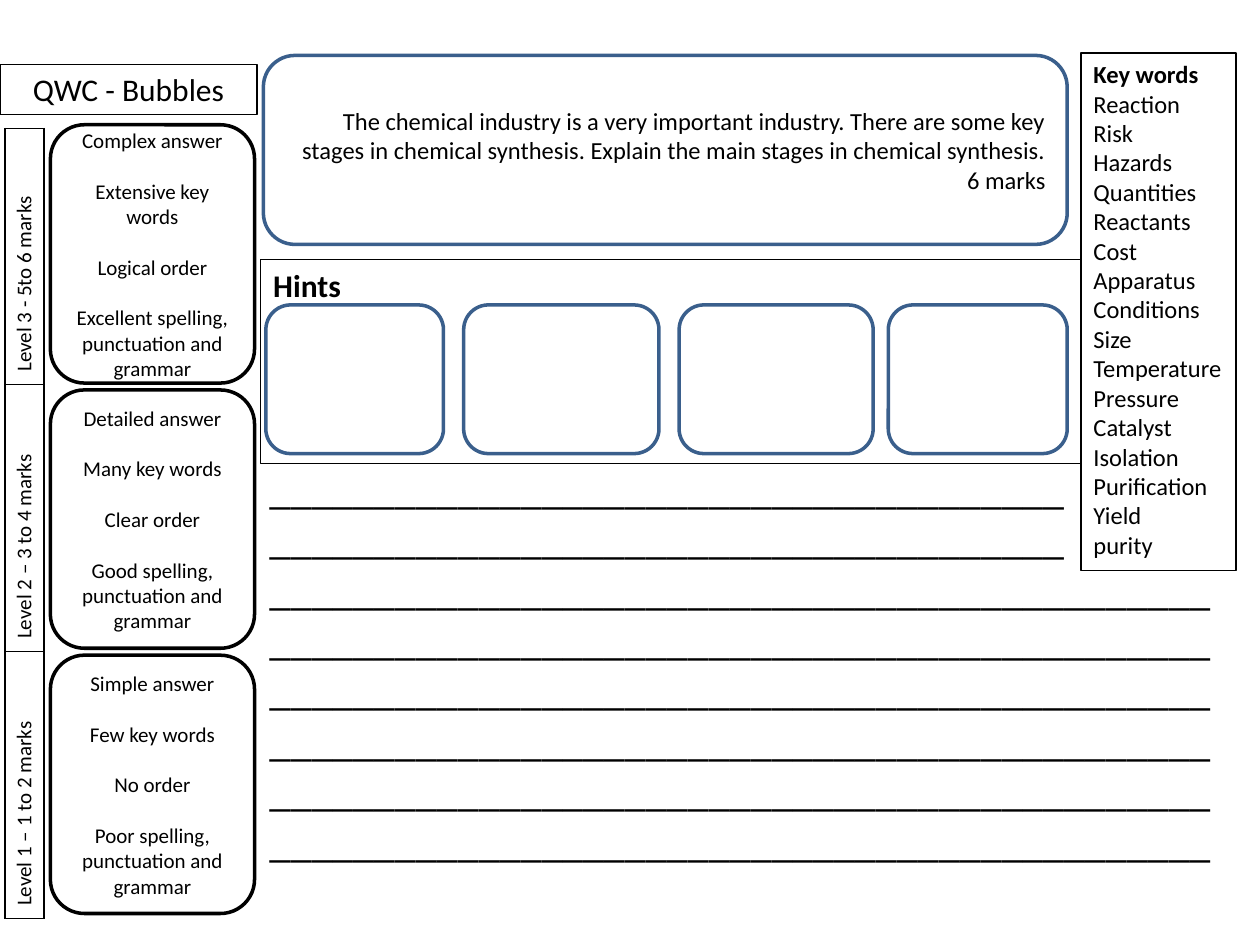
"""Build the QWC Bubbles worksheet slide on chemical synthesis."""
import lxml.etree
import pptx
import pptx.dml.color
import pptx.enum.shapes
import pptx.enum.text
import pptx.oxml.ns
import pptx.util

Inches, Pt = pptx.util.Inches, pptx.util.Pt
SHAPE = pptx.enum.shapes.MSO_SHAPE
ALIGN = pptx.enum.text.PP_ALIGN
ANCHOR = pptx.enum.text.MSO_ANCHOR

COLORS = {"ink": "000000", "frame": "3A5F8C"}
FONT = "Calibri"
TITLE = "QWC - Bubbles"
QUESTION = [
    "The chemical industry is a very important industry. There are some key stages "
    "in chemical synthesis. Explain the main stages in chemical synthesis.",
    "6 marks",
]
KEY_WORDS = [
    "Key words", "Reaction", "Risk", "Hazards", "Quantities", "Reactants", "Cost",
    "Apparatus", "Conditions", "Size", "Temperature", "Pressure", "Catalyst",
    "Isolation", "Purification", "Yield", "purity",
]
LEVELS = [
    ("Level 3 - 5to 6 marks", 2.03,
     ["Complex answer", "Extensive key words", "Logical order",
      "Excellent spelling, punctuation and grammar"]),
    ("Level 2 – 3 to 4 marks", 2.12,
     ["Detailed answer", "Many key words", "Clear order",
      "Good spelling, punctuation and grammar"]),
    ("Level 1 – 1 to 2 marks", 2.12,
     ["Simple answer", "Few key words", "No order",
      "Poor spelling, punctuation and grammar"]),
]
HINT_BUBBLES = [(2.11, 1.41), (3.68, 1.55), (5.39, 1.54), (7.05, 1.42)]
ANSWER_LINES = ["_" * 38] * 2 + ["_" * 45] * 6
BUBBLE_TOP, BUBBLE_STEP, BUBBLE_GAP = 0.99, 2.105, 14.6


def rgb(name):
    return pptx.dml.color.RGBColor.from_string(COLORS[name])


def write(frame, lines, size, align=ALIGN.LEFT, bold_first=False, gap=0):
    frame.text = "\n".join(lines)
    for index, paragraph in enumerate(frame.paragraphs):
        paragraph.alignment = align
        paragraph.space_before = Pt(gap if index else 0)
        for run in paragraph.runs:
            run.font.name = FONT
            run.font.size = Pt(size)
            run.font.bold = bold_first and index == 0
            run.font.color.rgb = rgb("ink")


def add_box(slide, place, kind=SHAPE.RECTANGLE, color="ink", width=0.75,
            anchor=ANCHOR.TOP, wrap=True):
    box = slide.shapes.add_shape(kind, *map(Inches, place))
    box.shadow.inherit = False
    box.fill.background()
    box.line.color.rgb = rgb(color)
    box.line.width = Pt(width)
    box.text_frame.vertical_anchor = anchor
    box.text_frame.word_wrap = wrap
    return box


def add_bubble(slide, place, color="frame"):
    return add_box(slide, place, SHAPE.ROUNDED_RECTANGLE, color, 2, ANCHOR.MIDDLE)


def add_borders(cell, width=1):
    properties = cell._tc.get_or_add_tcPr()
    for side in ("a:lnL", "a:lnR", "a:lnT", "a:lnB"):
        border = lxml.etree.SubElement(properties, pptx.oxml.ns.qn(side), w=str(Pt(width)))
        fill = lxml.etree.SubElement(border, pptx.oxml.ns.qn("a:solidFill"))
        lxml.etree.SubElement(fill, pptx.oxml.ns.qn("a:srgbClr"), val=COLORS["ink"])


def add_level_table(slide):
    height = sum(level[1] for level in LEVELS)
    levels = slide.shapes.add_table(
        len(LEVELS), 1, Inches(0.04), Inches(1.02), Inches(0.31), Inches(height)).table
    levels.first_row = levels.horz_banding = False
    for row, (label, row_height, _) in enumerate(LEVELS):
        levels.rows[row].height = Inches(row_height)
        cell = levels.cell(row, 0)
        write(cell.text_frame, [label], 12)
        cell.vertical_anchor = ANCHOR.MIDDLE
        cell._tc.get_or_add_tcPr().set("vert", "vert270")
        add_borders(cell)
        cell.fill.background()


def main():
    deck = pptx.Presentation()
    deck.slide_width, deck.slide_height = Inches(10), Inches(7.5)
    slide = deck.slides.add_slide(deck.slide_layouts[6])

    add_level_table(slide)
    question = add_bubble(slide, (2.09, 0.44, 6.38, 1.5))
    write(question.text_frame, QUESTION, 14, ALIGN.RIGHT)
    key_words = add_box(slide, (8.58, 0.42, 1.23, 4.11), wrap=False)
    write(key_words.text_frame, KEY_WORDS, 14, bold_first=True)
    hints = add_box(slide, (2.07, 2.06, 6.51, 1.62))
    write(hints.text_frame, ["Hints"], 18, bold_first=True)
    for left, width in HINT_BUBBLES:
        add_bubble(slide, (left, 2.42, width, 1.18))

    answer = slide.shapes.add_textbox(*map(Inches, (2.04, 3.62, 7.78, 3.74)))
    answer.text_frame.word_wrap = False
    write(answer.text_frame, ANSWER_LINES, 24)

    title = add_box(slide, (0, 0.51, 2.04, 0.4))
    write(title.text_frame, [TITLE], 18, ALIGN.CENTER)
    for index, (_, _, criteria) in enumerate(LEVELS):
        top = BUBBLE_TOP + index * BUBBLE_STEP
        bubble = add_bubble(slide, (0.4, top, 1.62, 2.05), "ink")
        write(bubble.text_frame, criteria, 12, ALIGN.CENTER, gap=BUBBLE_GAP)

    deck.save("out.pptx")


if __name__ == "__main__":
    main()
